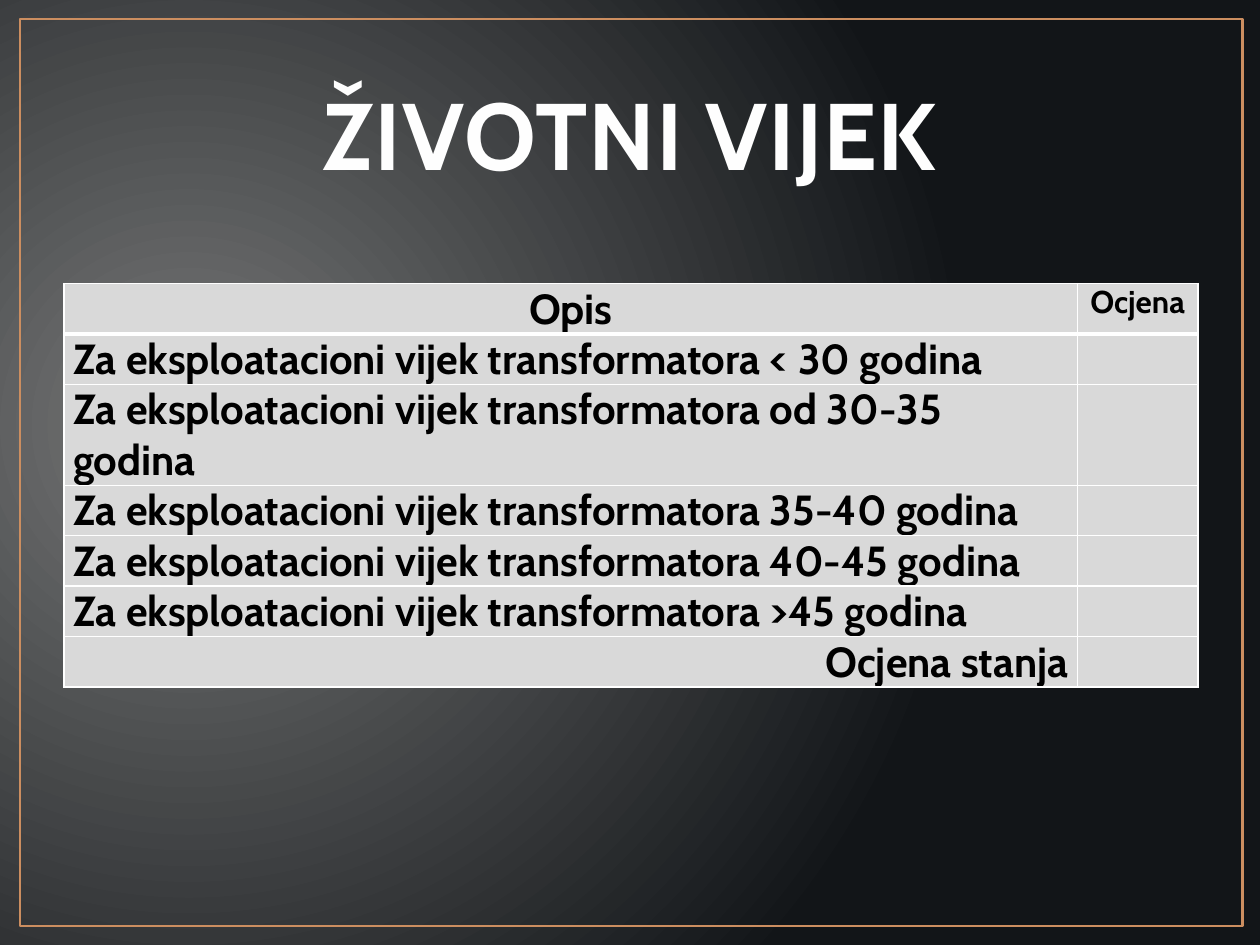
from pptx import Presentation
from pptx.dml.color import RGBColor
from pptx.enum.shapes import MSO_SHAPE
from pptx.enum.text import MSO_ANCHOR, PP_ALIGN
from pptx.oxml import parse_xml
from pptx.oxml.ns import nsdecls
from pptx.util import Inches, Pt

FONT = "Cabin"
LIFE = "Za eksploatacioni vijek transformatora "
AGES = ["< 30", "od 30-35", "35-40", "40-45", ">45"]
ROWS = [
    ("Opis", "Ocjena", PP_ALIGN.CENTER),
    *((f"{LIFE}{age} godina", "", PP_ALIGN.LEFT) for age in AGES),
    ("Ocjena stanja", "", PP_ALIGN.RIGHT),
]


def color(code):
    return RGBColor.from_string(code)


def solid(code):
    return f'<a:solidFill><a:srgbClr val="{code}"/></a:solidFill>'


def style(para, size, code, align):
    para.alignment = align
    font = para.font
    font.name, font.size, font.bold = FONT, Pt(size), True
    font.color.rgb = color(code)


def backdrop(slide):
    """Fill the background with a circular gradient, light at the left."""
    stops = "".join(
        f'<a:gs pos="{pos}"><a:srgbClr val="{code}"/></a:gs>'
        for pos, code in ((0, "767777"), (100000, "121518")))
    slide.element.cSld.insert(0, parse_xml(
        f'<p:bg {nsdecls("p", "a")}><p:bgPr><a:gradFill rotWithShape="1">'
        f'<a:gsLst>{stops}</a:gsLst><a:path path="circle">'
        '<a:fillToRect l="15000" t="50000" r="85000" b="60000"/></a:path>'
        '</a:gradFill><a:effectLst/></p:bgPr></p:bg>'))


def frame(slide, *box):
    rect = slide.shapes.add_shape(MSO_SHAPE.RECTANGLE, *map(Inches, box))
    rect.shadow.inherit = False
    rect.fill.background()
    rect.line.color.rgb = color("CC8E60")
    rect.line.width = Pt(1.5)


def title(slide, text, *box):
    """Add a heading whose letters have a thin outline and a shadow."""
    body = slide.shapes.add_textbox(*map(Inches, box)).text_frame
    body.word_wrap = True
    body.vertical_anchor = MSO_ANCHOR.BOTTOM
    para = body.paragraphs[0]
    style(para, 54, "FEFEFE", PP_ALIGN.CENTER)
    run = para.add_run()
    run.text = text
    run.font.color.rgb = color("FEFEFE")
    props = run.font._element
    props.set("spc", "50")
    props.insert(0, parse_xml(
        f'<a:ln {nsdecls("a")} w="12700">{solid("938861")}</a:ln>'))
    props.append(parse_xml(
        f'<a:effectLst {nsdecls("a")}><a:outerShdw blurRad="25400" '
        'dist="38100" dir="2700000"><a:srgbClr val="4A4431"/>'
        '</a:outerShdw></a:effectLst>'))


def edge(cell, base):
    """Draw white cell borders; base is the width of the bottom one."""
    props = cell._tc.get_or_add_tcPr()
    for spot, (side, width) in enumerate(
            (("L", 1), ("R", 1), ("T", 1), ("B", base))):
        props.insert(spot, parse_xml(
            f'<a:ln{side} {nsdecls("a")} w="{Pt(width)}">'
            f'{solid("FFFFFF")}</a:ln{side}>'))


def grid(slide, left, top, cols, high):
    shape = slide.shapes.add_table(
        len(ROWS), len(cols), Inches(left), Inches(top),
        Inches(sum(cols)), Inches(high * len(ROWS)))
    table = shape.table
    for col, width in zip(table.columns, cols):
        col.width = Inches(width)
    for row, (text, score, align) in enumerate(ROWS):
        parts = ((text, 24, align), (score, 18, PP_ALIGN.CENTER))
        for col, (words, size, side) in enumerate(parts):
            cell = table.cell(row, col)
            cell.text = words
            cell.margin_left = cell.margin_right = Inches(0.07)
            cell.margin_top = cell.margin_bottom = 0
            cell.fill.solid()
            cell.fill.fore_color.rgb = color("D9D9D9")
            edge(cell, 1 if row else 3)
            style(cell.text_frame.paragraphs[0], size, "000000", side)


def main():
    deck = Presentation()
    deck.slide_width, deck.slide_height = Inches(10), Inches(7.5)
    slide = deck.slides.add_slide(deck.slide_layouts[6])
    backdrop(slide)
    frame(slide, 0.16, 0.15, 9.7, 7.2)
    title(slide, "ŽIVOTNI VIJEK", 0.5, 0.3, 9, 1.25)
    grid(slide, 0.51, 2.25, (8.04, 0.96), 0.4)
    deck.save("out.pptx")


if __name__ == "__main__":
    main()
